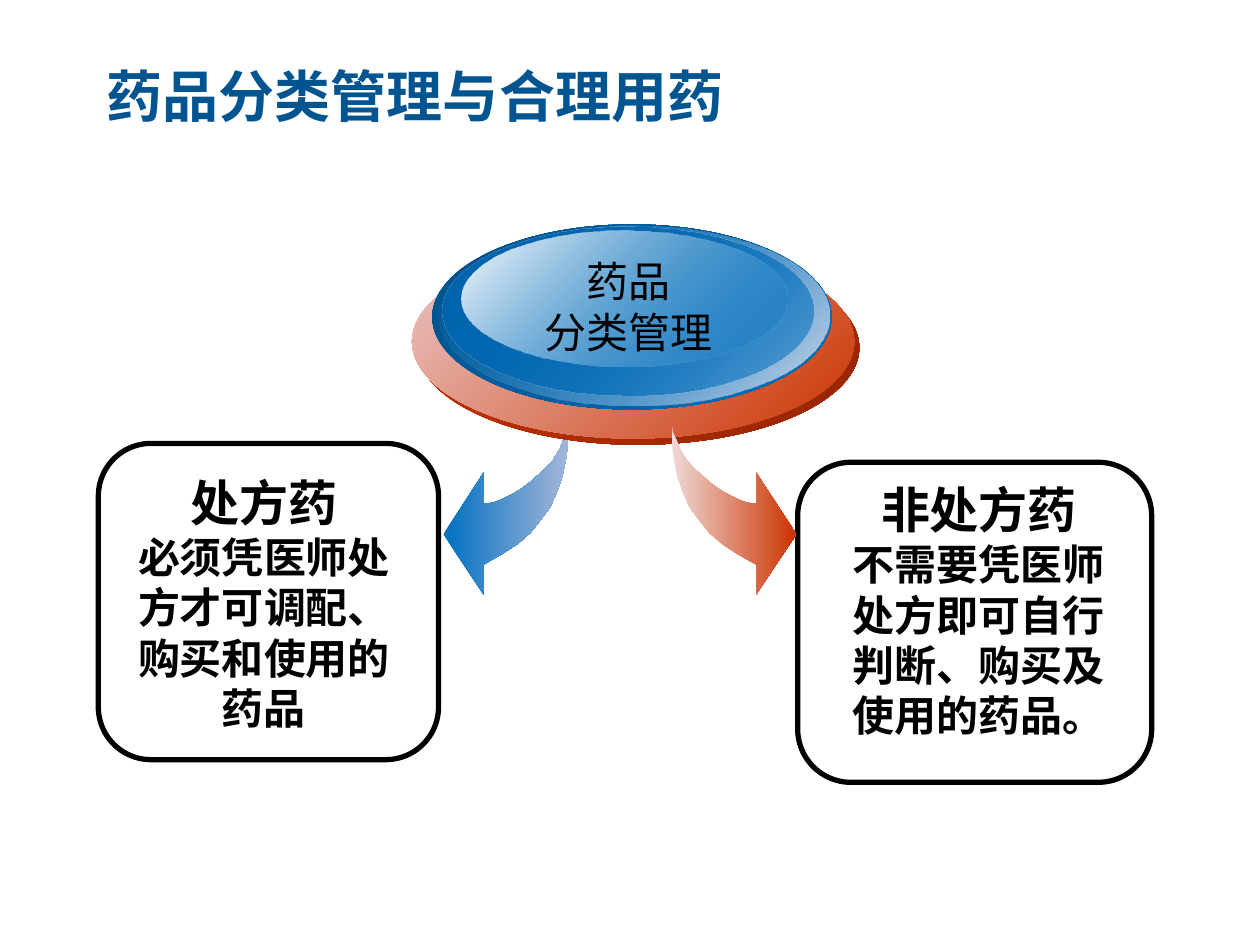
from typing import NamedTuple

from lxml.etree import SubElement
from pptx import Presentation
from pptx.dml.color import RGBColor
from pptx.enum.shapes import MSO_SHAPE
from pptx.enum.text import MSO_AUTO_SIZE, PP_ALIGN
from pptx.oxml.ns import qn
from pptx.util import Pt

CJK_FONT = "Noto Sans CJK SC"
BLACK = "000000"


class Box(NamedTuple):
    left: float
    top: float
    width: float
    height: float


class Stop(NamedTuple):
    color: str
    opacity: int = 100


class Disc(NamedTuple):
    box: Box
    start: Stop
    end: Stop


class Card(NamedTuple):
    frame: Box
    text_box: Box
    heading: str
    body: str


class Arrow(NamedTuple):
    stem_left: float
    direction: int
    start: Stop
    end: Stop


ARROW_TOP = 241.9
# Outline of an arrow that curves down and away from its stem.
ARROW_OUTLINE = [
    (0, 0), (0, 11.5), (1.5, 21.6), (3.5, 31), (6.5, 39.6), (10.4, 48.2),
    (15.8, 55.4), (21.6, 62.6), (29, 69), (38.2, 75), (48.2, 80.6),
    (48.2, 98), (71.3, 63.4), (48.2, 28), (48.2, 46), (43.2, 45.4),
    (38.9, 43.9), (33.1, 41), (28, 38.2), (23, 34.6), (18, 30.2),
    (13, 25.9), (8.6, 20.9), (5, 15), (2.9, 10), (0.7, 5),
]

LEFT_ARROW = Arrow(324.7, -1, Stop("0070C0"), Stop("A4B6DA"))
RIGHT_ARROW = Arrow(383.8, 1, Stop("F0D9D8"), Stop("CC3300"))

DISCS = [
    Disc(Box(238.3, 143.3, 252.7, 110.9), Stop("CC3300"), Stop("952500")),
    Disc(Box(235.4, 139.7, 252.7, 110.9), Stop("EAC7C6"), Stop("CC3300")),
    Disc(Box(247, 128.2, 228.2, 105.8), Stop("005089"), Stop("0070C0")),
    Disc(Box(250.6, 128.9, 223.2, 103), Stop("0070C0", 0), Stop("D4DBEB")),
    Disc(Box(252.7, 129.6, 212.4, 96.5), Stop("0065AE"), Stop("0070C0", 48)),
    Disc(Box(263.5, 131.8, 186.5, 77.8), Stop("FFFFFF"), Stop("0070C0", 38)),
]

PRESCRIPTION = Card(
    Box(56.2, 253.4, 194.4, 180.7), Box(64.1, 266.4, 173.5, 229.7),
    "处方药", "必须凭医师处方才可调配、购买和使用的药品",
)
OVER_THE_COUNTER = Card(
    Box(455.8, 264.2, 202.3, 182.9), Box(469.4, 270.7, 180, 252.7),
    "非处方药", "不需要凭医师处方即可自行判断、购买及使用的药品。",
)


def rgb(color: str) -> RGBColor:
    return RGBColor.from_string(color)


def in_points(box: Box) -> list:
    return [Pt(value) for value in box]


def fill_gradient(shape, start: Stop, end: Stop, angle: float) -> None:
    """Fill with two stops; the angle runs counter-clockwise."""
    shape.shadow.inherit = False
    shape.line.fill.background()
    shape.fill.gradient()
    shape.fill.gradient_angle = angle
    for gradient_stop, stop in zip(shape.fill.gradient_stops, (start, end)):
        gradient_stop.color.rgb = rgb(stop.color)
    colors = shape.element.spPr.findall(".//" + qn("a:srgbClr"))
    for color, stop in zip(colors, (start, end)):
        if stop.opacity < 100:
            SubElement(color, qn("a:alpha"), val=str(stop.opacity * 1000))


def add_text_box(slide, box: Box, wrap: bool = True):
    frame = slide.shapes.add_textbox(*in_points(box)).text_frame
    frame.word_wrap = wrap
    frame.auto_size = MSO_AUTO_SIZE.SHAPE_TO_FIT_TEXT
    return frame


def write_paragraph(frame, text: str, *, size: float = 24, font: str = CJK_FONT,
                    color: str = BLACK, bold: bool = False,
                    align=PP_ALIGN.CENTER) -> None:
    """Fill the empty first paragraph, or add one after the last."""
    paragraph = frame.paragraphs[0] if not frame.text else frame.add_paragraph()
    paragraph.alignment = align
    run = paragraph.add_run()
    run.text = text
    run.font.size = Pt(size)
    run.font.bold = bold
    run.font.color.rgb = rgb(color)
    run.font.name = font
    SubElement(run.font._element, qn("a:ea"), typeface=font)


def add_disc(slide, disc: Disc) -> None:
    shape = slide.shapes.add_shape(MSO_SHAPE.OVAL, *in_points(disc.box))
    fill_gradient(shape, disc.start, disc.end, 315)


def add_arrow(slide, arrow: Arrow) -> None:
    points = [(Pt(arrow.stem_left + arrow.direction * x), Pt(ARROW_TOP + y))
              for x, y in ARROW_OUTLINE]
    builder = slide.shapes.build_freeform(*points[0])
    builder.add_line_segments(points[1:], close=True)
    fill_gradient(builder.convert_to_shape(), arrow.start, arrow.end, 0)


def add_card(slide, card: Card) -> None:
    frame = slide.shapes.add_shape(MSO_SHAPE.ROUNDED_RECTANGLE, *in_points(card.frame))
    frame.shadow.inherit = False
    frame.fill.background()
    frame.line.color.rgb = rgb(BLACK)
    frame.line.width = Pt(3)
    text = add_text_box(slide, card.text_box)
    write_paragraph(text, card.heading, size=28, font="Arial", bold=True)
    write_paragraph(text, card.body, bold=True)


def main() -> None:
    presentation = Presentation()
    presentation.slide_width, presentation.slide_height = Pt(720), Pt(540)
    slide = presentation.slides.add_slide(presentation.slide_layouts[6])

    add_card(slide, PRESCRIPTION)
    add_arrow(slide, LEFT_ARROW)
    for disc in DISCS:
        add_disc(slide, disc)
    label = add_text_box(slide, Box(303.1, 142.6, 111.6, 65.5), wrap=False)
    for line in ("药品", "分类管理"):
        write_paragraph(label, line)
    add_card(slide, OVER_THE_COUNTER)
    add_arrow(slide, RIGHT_ARROW)

    title = add_text_box(slide, Box(54, 31.7, 373.7, 46.1))
    write_paragraph(title, "药品分类管理与合理用药", size=32, color="005490",
                    bold=True, align=PP_ALIGN.LEFT)
    presentation.save("out.pptx")


if __name__ == "__main__":
    main()
